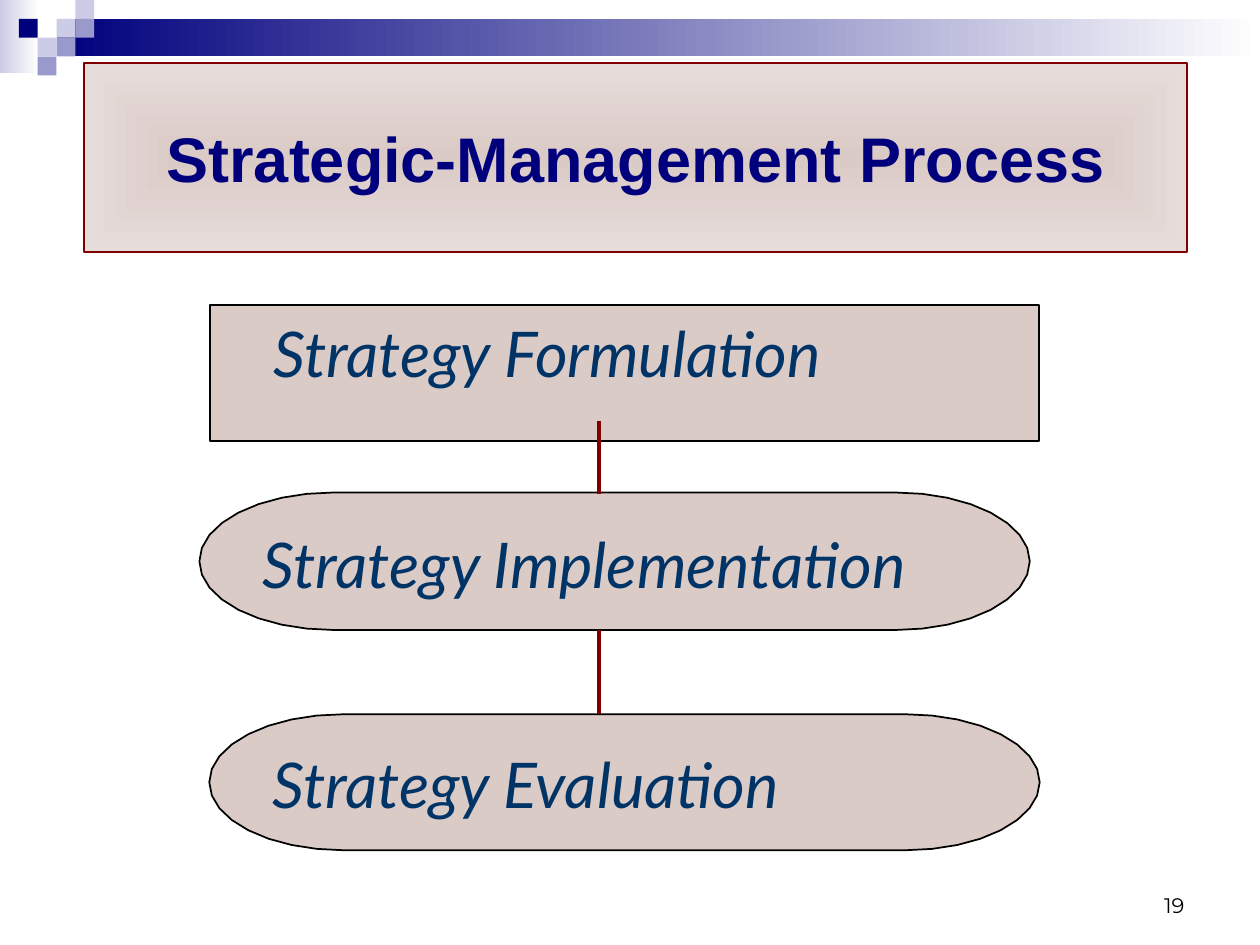
import math

import pptx
import pptx.dml.color
import pptx.enum.shapes
import pptx.enum.text
import pptx.oxml
import pptx.oxml.ns
import pptx.util

Cm, Pt = pptx.util.Cm, pptx.util.Pt
ALIGN = pptx.enum.text.PP_ALIGN
ANCHOR = pptx.enum.text.MSO_ANCHOR

COLORS = {
    "navy": "00007D", "lilac": "CCCCE6", "violet": "9999CC", "white": "FFFFFF",
    "rose": "DBCBC7", "pale rose": "E6DCDA", "maroon": "800000",
    "label": "003366", "black": "000000",
}

TITLE = "Strategic-Management Process"
PAGE_NUMBER = "19"

# Lengths in centimetres: left, top, width, height
BANDS = [
    ((0, 0, 0.79, 1.47), "lilac"),
    ((1.14, 0.38, 24.26, 0.76), "navy"),
]
SQUARE = 0.38
SQUARES = [  # column, row, colour
    (3, 1, "lilac"), (4, 0, "lilac"), (4, 1, "violet"), (2, 2, "lilac"),
    (1, 1, "navy"), (3, 2, "violet"), (2, 3, "violet"),
]
STAGES = [  # text, outline, box, distance from box top to label top
    ("Strategy Formulation", "rectangle", (4.24, 6.15, 16.71, 2.74), 0.07),
    ("Strategy Implementation", "pill", (4.02, 9.93, 16.74, 2.77), 0.53),
    ("Strategy Evaluation", "pill", (4.22, 14.4, 16.74, 2.74), 0.51),
]
LABEL_INSET, LABEL_WIDTH, LABEL_HEIGHT = 1.03, 14.66, 1.73
LABEL_INDENT = 0.95
PILL_END, PILL_STEPS = 2.69, 16
LINK_X = 12.07
LINKS = [(8.48, 9.96), (12.7, 14.4)]  # top, bottom


def color(name):
    return pptx.dml.color.RGBColor.from_string(COLORS[name])


def paint(shape, fill, line=None):
    """Give a shape a plain colour, or a gradient for a pair of colours."""
    shape.shadow.inherit = False
    if isinstance(fill, tuple):
        shape.fill.gradient()
        shape.fill.gradient_angle = 0
        for stop, name in zip(shape.fill.gradient_stops, fill):
            stop.color.rgb = color(name)
    else:
        shape.fill.solid()
        shape.fill.fore_color.rgb = color(fill)
    if line:
        shape.line.color.rgb = color(line)
        shape.line.width = Pt(1)
    else:
        shape.line.fill.background()


def add_rectangle(slide, box, fill, line=None):
    kind = pptx.enum.shapes.MSO_SHAPE.RECTANGLE
    shape = slide.shapes.add_shape(kind, *map(Cm, box))
    paint(shape, fill, line)
    return shape


def add_pill(slide, box, fill, line):
    """Draw a bar whose two ends are half ellipses made of straight steps."""
    left, top, width, height = box
    radius = height / 2
    points = []
    for center, start in ((left + PILL_END, -90), (left + width - PILL_END, 90)):
        for step in range(PILL_STEPS + 1):
            angle = math.radians(start - 180 * step / PILL_STEPS)
            points.append((Cm(center + PILL_END * math.cos(angle)),
                           Cm(top + radius + radius * math.sin(angle))))
    builder = slide.shapes.build_freeform(*points[0])
    builder.add_line_segments(points[1:], close=True)
    paint(builder.convert_to_shape(), fill, line)


def write(shape, text, font, size, name, align, anchor, bold=False, italic=False):
    frame = shape.text_frame
    frame.word_wrap = True
    frame.vertical_anchor = anchor
    frame.text = text
    paragraph = frame.paragraphs[0]
    paragraph.alignment = align
    style = paragraph.runs[0].font
    style.name, style.size = font, Pt(size)
    style.bold, style.italic = bold, italic
    style.color.rgb = color(name)
    return paragraph


def spread_from_center(shape):
    """Turn a linear gradient into one that grows from the middle outwards."""
    gradient = shape.fill._xPr.find(pptx.oxml.ns.qn("a:gradFill"))
    linear = gradient.find(pptx.oxml.ns.qn("a:lin"))
    gradient.replace(linear, pptx.oxml.parse_xml(
        f'<a:path {pptx.oxml.ns.nsdecls("a")} path="shape">'
        '<a:fillToRect l="50000" t="50000" r="50000" b="50000"/></a:path>'))


def add_link(slide, top, bottom):
    kind = pptx.enum.shapes.MSO_CONNECTOR.STRAIGHT
    link = slide.shapes.add_connector(
        kind, Cm(LINK_X), Cm(top), Cm(LINK_X), Cm(bottom))
    link.line.color.rgb = color("maroon")
    link.line.width = Pt(2)
    link._element.spPr.append(
        pptx.oxml.parse_xml(f'<a:effectLst {pptx.oxml.ns.nsdecls("a")}/>'))


def main():
    presentation = pptx.Presentation()
    presentation.slide_width, presentation.slide_height = Cm(25.4), Cm(19.05)
    slide = presentation.slides.add_slide(presentation.slide_layouts[6])

    for box, name in BANDS:
        add_rectangle(slide, box, (name, "white"))
    for column, row, name in SQUARES:
        box = (column * SQUARE, row * SQUARE, SQUARE, SQUARE)
        add_rectangle(slide, box, name)

    number = slide.shapes.add_textbox(*map(Cm, (18.2, 17.36, 5.93, 1.27)))
    write(number, PAGE_NUMBER, "Montserrat", 12, "black", ALIGN.RIGHT, ANCHOR.BOTTOM)

    title = add_rectangle(slide, (1.7, 1.27, 22.23, 3.81),
                          ("rose", "pale rose"), "maroon")
    spread_from_center(title)
    write(title, TITLE, "Arial", 36, "navy", ALIGN.CENTER, ANCHOR.MIDDLE, bold=True)

    for text, outline, box, drop in STAGES:
        draw = add_pill if outline == "pill" else add_rectangle
        draw(slide, box, "rose", "black")
        label = slide.shapes.add_textbox(
            Cm(box[0] + LABEL_INSET), Cm(box[1] + drop),
            Cm(LABEL_WIDTH), Cm(LABEL_HEIGHT))
        paragraph = write(label, text, "Lato", 36, "label",
                          ALIGN.LEFT, ANCHOR.TOP, italic=True)
        properties = paragraph._p.get_or_add_pPr()
        properties.set("marL", str(Cm(LABEL_INDENT)))
        properties.set("indent", str(-Cm(LABEL_INDENT)))

    for top, bottom in LINKS:
        add_link(slide, top, bottom)

    presentation.save("out.pptx")


if __name__ == "__main__":
    main()
